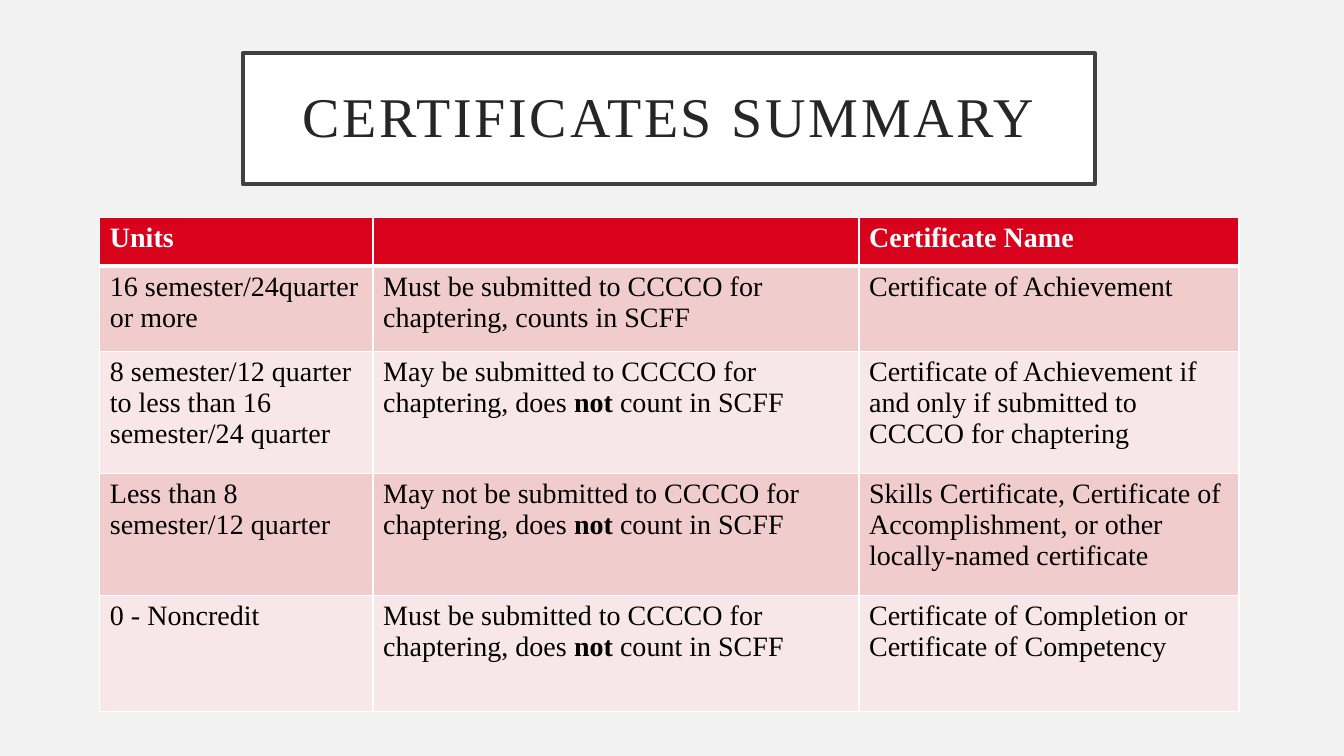
from lxml import etree
from pptx import Presentation
from pptx.dml.color import RGBColor
from pptx.enum.shapes import MSO_SHAPE
from pptx.enum.text import MSO_ANCHOR, PP_ALIGN
from pptx.oxml.ns import qn
from pptx.util import Inches, Pt

RECTANGLE = MSO_SHAPE.RECTANGLE
MIDDLE = MSO_ANCHOR.MIDDLE
CENTER = PP_ALIGN.CENTER

GRID_COLUMNS, GRID_ROWS = 133.3, 75
COLUMN_WIDTHS = [27.1, 48.2, 37.7]
ROW_HEIGHTS = [4.8, 8.5, 12.1, 12.1, 11.5]
CERTIFICATES = [
    ["Units", "", "Certificate Name"],
    ["16 semester/24quarter or more",
     "Must be submitted to CCCCO for chaptering, counts in SCFF",
     "Certificate of Achievement"],
    ["8 semester/12 quarter to less than 16 semester/24 quarter",
     "May be submitted to CCCCO for chaptering, does *not* count in SCFF",
     "Certificate of Achievement if and only if submitted to CCCCO for chaptering"],
    ["Less than 8 semester/12 quarter",
     "May not be submitted to CCCCO for chaptering, does *not* count in SCFF",
     "Skills Certificate, Certificate of Accomplishment, or other locally-named certificate"],
    ["0 - Noncredit",
     "Must be submitted to CCCCO for chaptering, does *not* count in SCFF",
     "Certificate of Completion or Certificate of Competency"],
]


def color(value):
    return RGBColor.from_string(value)


class SlideBuilder:
    font_name = "Times New Roman"
    background, panel, frame, title_color = "F2F2F2", "FFFFFF", "404040", "262626"
    header_fill, header_text, body_text = "D8021D", "FFFFFF", "000000"
    band_fills = ["F0CCCD", "F8E7E8"]
    border = "FFFFFF"

    def __init__(self, presentation):
        self.column = presentation.slide_width / GRID_COLUMNS
        self.row = presentation.slide_height / GRID_ROWS
        self.slide = presentation.slides.add_slide(presentation.slide_layouts[6])
        fill = self.slide.background.fill
        fill.solid()
        fill.fore_color.rgb = color(self.background)

    def across(self, columns):
        return round(columns * self.column)

    def down(self, rows):
        return round(rows * self.row)

    def place(self, left, top, width, height):
        return self.across(left), self.down(top), self.across(width), self.down(height)

    def style_run(self, run, size, text_color, bold=False):
        run.font.name = self.font_name
        run.font.size = Pt(size)
        run.font.color.rgb = color(text_color)
        run.font.bold = bold

    def title(self, text, *area):
        shape = self.slide.shapes.add_shape(RECTANGLE, *self.place(*area))
        shape.shadow.inherit = False
        shape.fill.solid()
        shape.fill.fore_color.rgb = color(self.panel)
        shape.line.color.rgb = color(self.frame)
        shape.line.width = Pt(3)
        frame = shape.text_frame
        frame.text = text
        frame.word_wrap = True
        frame.vertical_anchor = MIDDLE
        frame.margin_left = frame.margin_right = self.across(3)
        frame.margin_top = frame.margin_bottom = self.down(2)
        paragraph = frame.paragraphs[0]
        paragraph.alignment = CENTER
        paragraph.line_spacing = 0.9
        run = paragraph.runs[0]
        self.style_run(run, 40, self.title_color)
        run.font._element.set("spc", "200")

    def cell_borders(self, cell, widths):
        properties = cell._tc.get_or_add_tcPr()
        for side, width in widths.items():
            line = etree.SubElement(properties, qn(f"a:ln{side}"), w=str(Pt(width)))
            fill = etree.SubElement(line, qn("a:solidFill"))
            etree.SubElement(fill, qn("a:srgbClr"), val=self.border)

    def cell(self, cell, text, row_index):
        is_header = row_index == 0
        self.cell_borders(cell, {
            "L": 1, "R": 1,
            "T": 3 if row_index == 1 else 1,
            "B": 3 if is_header else 1,
        })
        band = self.band_fills[(row_index - 1) % 2]
        cell.fill.solid()
        cell.fill.fore_color.rgb = color(self.header_fill if is_header else band)
        text_color = self.header_text if is_header else self.body_text
        paragraph = cell.text_frame.paragraphs[0]
        paragraph.font.size = Pt(20)
        for index, part in enumerate(text.split("*")):
            if part:
                run = paragraph.add_run()
                run.text = part
                self.style_run(run, 20, text_color, is_header or index % 2 == 1)

    def table(self, rows, left, top, widths, heights):
        area = self.place(left, top, sum(widths), sum(heights))
        table = self.slide.shapes.add_table(len(heights), len(widths), *area).table
        table.horz_banding = False
        for column, width in zip(table.columns, widths):
            column.width = self.across(width)
        for row_index, (row, height) in enumerate(zip(table.rows, heights)):
            row.height = self.down(height)
            for cell, text in zip(row.cells, rows[row_index]):
                self.cell(cell, text, row_index)


def main():
    presentation = Presentation()
    presentation.slide_width = Inches(13.33)
    presentation.slide_height = Inches(7.5)
    builder = SlideBuilder(presentation)
    builder.title("CERTIFICATES SUMMARY", 24.1, 5.3, 84.5, 13)
    builder.table(CERTIFICATES, 9.9, 21.6, COLUMN_WIDTHS, ROW_HEIGHTS)
    presentation.save("out.pptx")


if __name__ == "__main__":
    main()
